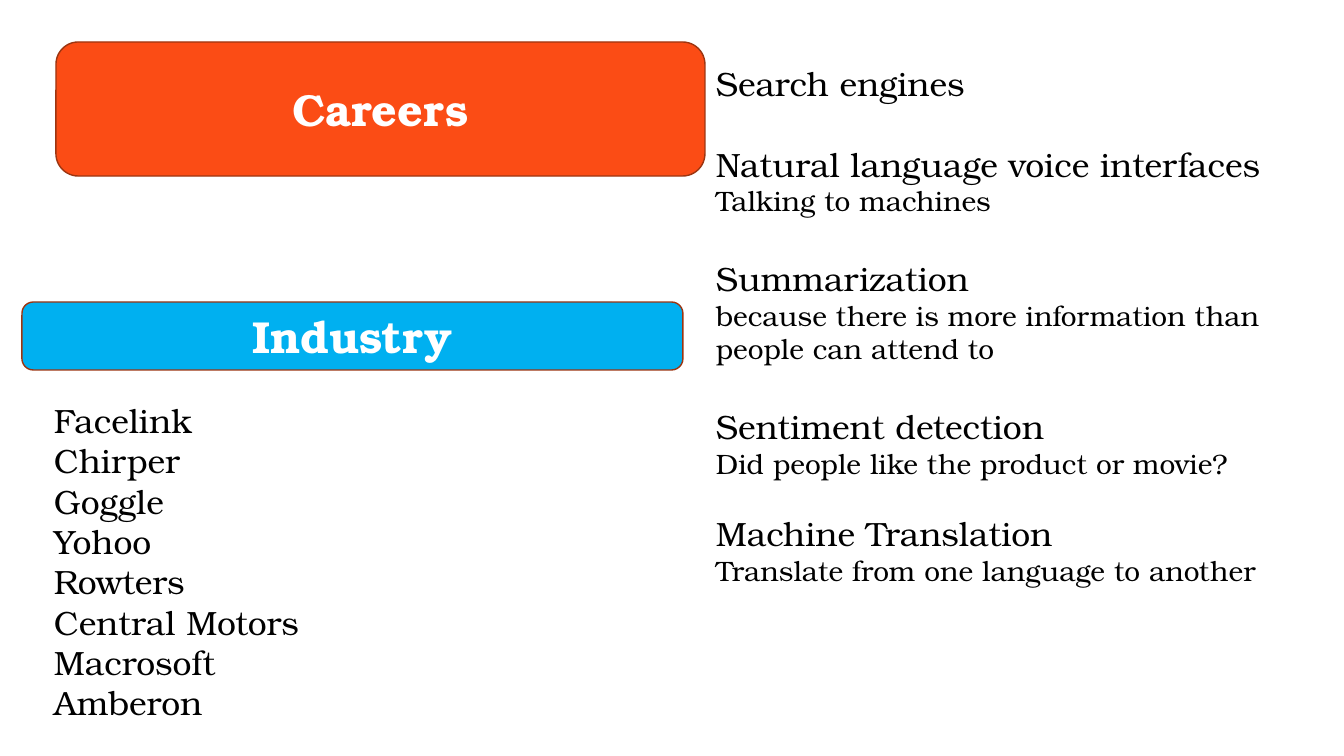
from pptx import Presentation
from pptx import util as u
from pptx.dml.color import RGBColor
from pptx.enum import shapes, text

FONT = "TeX Gyre Bonum"
BANNERS = [
    ("Careers", "FB4C15", (56, 42, 649, 134)),
    ("Industry", "00B0F0", (22, 302, 661, 68)),
]
APPLICATIONS = [
    ("Search engines", None, 0),
    ("Natural language voice interfaces", "Talking to machines", 28.8),
    ("Summarization",
     "because there is more information than people can attend to", 28.8),
    ("Sentiment detection", "Did people like the product or movie?", 28.8),
    ("Machine Translation", "Translate from one language to another", 24),
]
EMPLOYERS = ["Facelink", "Chirper", "Goggle", "Yohoo", "Rowters",
             "Central Motors", "Macrosoft", "Amberon"]
APPLICATIONS_BOX = (706, 58, 616, 621)
EMPLOYERS_BOX = (44, 395, 605, 336)
HEADING_SIZE, DETAIL_SIZE, BANNER_SIZE = 24, 20, 32


def px(length):
    return u.Emu(round(length * 914400 / 100.8))


def color(value):
    return RGBColor.from_string(value)


def style(paragraph, size, value="000000", bold=False):
    font = paragraph.font
    font.name, font.size, font.bold = FONT, u.Pt(size), bold
    font.color.rgb = color(value)


def add_banner(slide, label, fill, box):
    shape = slide.shapes.add_shape(
        shapes.MSO_SHAPE.ROUNDED_RECTANGLE, *map(px, box))
    shape.shadow.inherit = False
    shape.fill.solid()
    shape.fill.fore_color.rgb = color(fill)
    shape.line.color.rgb = color("9C3511")
    shape.line.width = u.Pt(1)
    frame = shape.text_frame
    frame.text = label
    frame.vertical_anchor = text.MSO_ANCHOR.MIDDLE
    paragraph = frame.paragraphs[0]
    paragraph.alignment = text.PP_ALIGN.CENTER
    style(paragraph, BANNER_SIZE, "FFFFFF", True)


def add_list(slide, lines, box):
    frame = slide.shapes.add_textbox(*map(px, box)).text_frame
    frame.word_wrap = True
    for index, (line, size, gap) in enumerate(lines):
        paragraph = frame.add_paragraph() if index else frame.paragraphs[0]
        paragraph.text = line
        if gap:
            paragraph.space_before = u.Pt(gap)
        style(paragraph, size)


def main():
    presentation = Presentation()
    presentation.slide_width, presentation.slide_height = px(1344), px(756)
    slide = presentation.slides.add_slide(presentation.slide_layouts[6])
    for banner in BANNERS:
        add_banner(slide, *banner)

    application_lines = []
    for heading, detail, gap in APPLICATIONS:
        application_lines.append((heading, HEADING_SIZE, gap))
        if detail:
            application_lines.append((detail, DETAIL_SIZE, 0))
    add_list(slide, application_lines, APPLICATIONS_BOX)
    add_list(slide, [(name, HEADING_SIZE, 0) for name in EMPLOYERS],
             EMPLOYERS_BOX)
    presentation.save("out.pptx")


if __name__ == "__main__":
    main()
